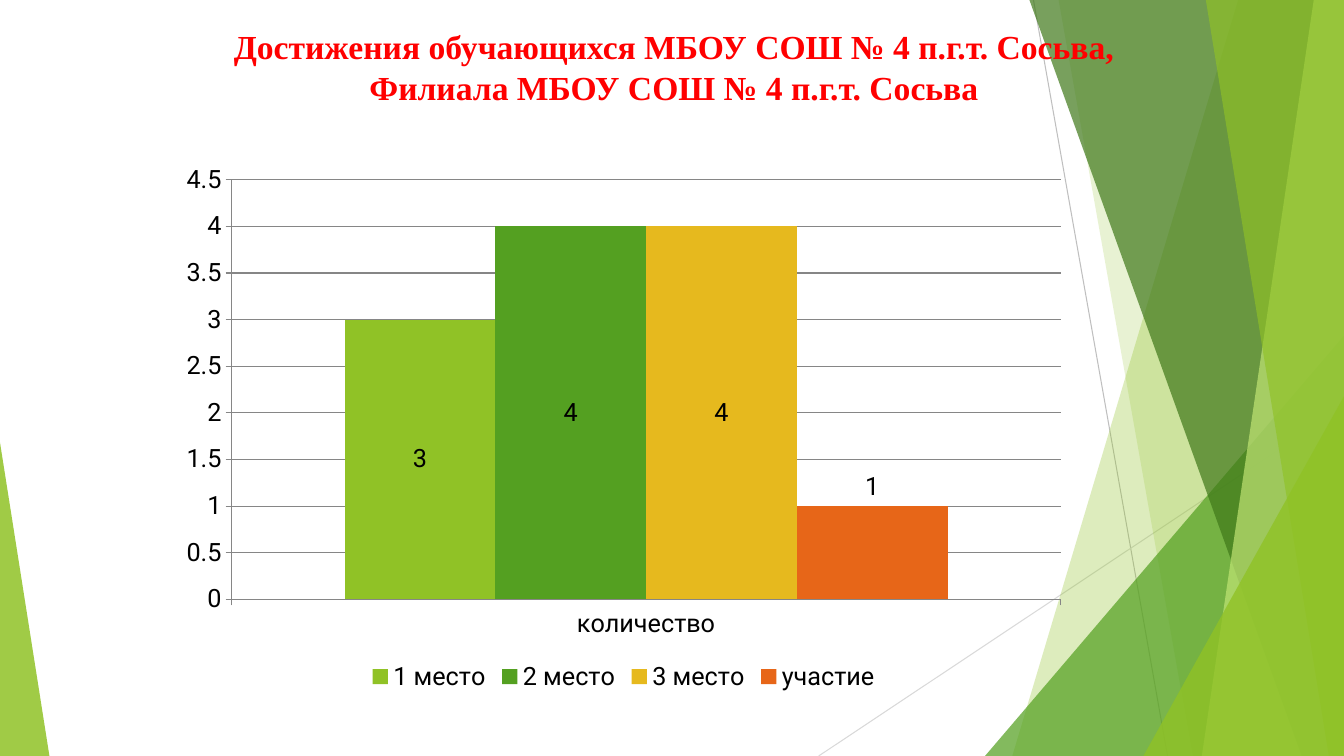
from dataclasses import dataclass

from lxml import etree
from pptx import Presentation
from pptx.chart.data import CategoryChartData
from pptx.dml.color import RGBColor
from pptx.enum.chart import XL_CHART_TYPE, XL_LABEL_POSITION, XL_LEGEND_POSITION, XL_TICK_MARK
from pptx.enum.shapes import MSO_CONNECTOR, MSO_SHAPE
from pptx.enum.text import MSO_AUTO_SIZE, PP_ALIGN
from pptx.oxml.ns import qn
from pptx.util import Pt

COLUMNS = XL_CHART_TYPE.COLUMN_CLUSTERED
LABEL_CENTER = XL_LABEL_POSITION.CENTER
LABEL_ABOVE = XL_LABEL_POSITION.OUTSIDE_END
LEGEND_BOTTOM = XL_LEGEND_POSITION.BOTTOM
TICK_OUTSIDE = XL_TICK_MARK.OUTSIDE
STRAIGHT = MSO_CONNECTOR.STRAIGHT
TRIANGLE = MSO_SHAPE.ISOSCELES_TRIANGLE
FIT_SHAPE = MSO_AUTO_SIZE.SHAPE_TO_FIT_TEXT
CENTER = PP_ALIGN.CENTER


@dataclass
class Theme:
    lime: str = "90C226"
    green: str = "54A021"
    forest: str = "3F7819"
    pale: str = "C0E474"
    yellow: str = "E6B91E"
    orange: str = "E76618"
    title: str = "FF0000"
    text: str = "000000"
    axis: str = "868686"
    line_dark: str = "BFBFBF"
    line_light: str = "D9D9D9"
    title_font: str = "Times New Roman"
    chart_font: str = "Roboto"
    title_size: int = 24
    chart_size: int = 18
    line_width: float = 0.75


theme = Theme()
PX = 9144
WIDTH, HEIGHT = 1333, 750


def paint(shape, color, opacity):
    shape.shadow.inherit = False
    shape.fill.solid()
    shape.fill.fore_color.rgb = RGBColor.from_string(color)
    shape.line.fill.background()
    swatch = shape.fill._xPr.find(qn("a:solidFill"))[0]
    etree.SubElement(swatch, qn("a:alpha")).set("val", str(opacity * 1000))


def add_text(page, lines, left, top, width, height, size, font, color, bold=False, align=CENTER):
    box = page.shapes.add_textbox(left * PX, top * PX, width * PX, height * PX)
    frame = box.text_frame
    frame.word_wrap = True
    frame.auto_size = FIT_SHAPE
    for index, line in enumerate(lines):
        para = frame.add_paragraph() if index else frame.paragraphs[0]
        para.alignment = align
        span = para.add_run()
        span.text = line
        span.font.size = Pt(size)
        span.font.name = font
        span.font.bold = bold
        span.font.color.rgb = RGBColor.from_string(color)


deck = Presentation()
deck.slide_width = WIDTH * PX
deck.slide_height = HEIGHT * PX
page = deck.slides.add_slide(deck.slide_layouts[6])

rays = [
    (1025, 0, 1158, HEIGHT, theme.line_dark),
    (WIDTH, 403, 812, HEIGHT, theme.line_light),
]
for start_x, start_y, end_x, end_y, color in rays:
    ray = page.shapes.add_connector(STRAIGHT, start_x * PX, start_y * PX, end_x * PX, end_y * PX)
    ray.line.color.rgb = RGBColor.from_string(color)
    ray.line.width = Pt(theme.line_width)
    etree.SubElement(ray._element.spPr, qn("a:effectLst"))

facets = [
    ("band", (1228, 1004), theme.lime, 30),
    ("band", (1050, 1183), theme.lime, 20),
    ("triangle", (977, 333, 356, 1), theme.green, 72),
    ("band", (1021, 1291), theme.forest, 70),
    ("band", (1303, 1192), theme.pale, 70),
    ("band", (1196, 1318), theme.lime, 65),
    ("triangle", (1134, 393, 199, 1), theme.lime, 80),
    ("triangle", (0, 439, 49, 0), theme.lime, 85),
]
for kind, place, color, opacity in facets:
    if kind == "band":
        top_x, bottom_x = place
        outline = page.shapes.build_freeform(top_x, 0, scale=PX)
        outline.add_line_segments([(WIDTH, 0), (WIDTH, HEIGHT), (bottom_x, HEIGHT)], close=True)
        facet = outline.convert_to_shape()
    else:
        left, top, width, apex = place
        facet = page.shapes.add_shape(TRIANGLE, left * PX, top * PX, width * PX, (HEIGHT - top) * PX)
        facet.adjustments[0] = apex
    paint(facet, color, opacity)

title_lines = [
    "Достижения обучающихся МБОУ СОШ № 4 п.г.т. Сосьва, ",
    "Филиала МБОУ СОШ № 4 п.г.т. Сосьва ",
]
add_text(page, title_lines, 130, 21, 1085, 91, size=theme.title_size,
         font=theme.title_font, color=theme.title, bold=True)

results = [
    ("1 место", 3, theme.lime, LABEL_CENTER),
    ("2 место", 4, theme.green, LABEL_CENTER),
    ("3 место", 4, theme.yellow, LABEL_CENTER),
    ("участие", 1, theme.orange, LABEL_ABOVE),
]
data = CategoryChartData()
data.categories = ["количество"]
for name, count, color, position in results:
    data.add_series(name, [count])
chart = page.shapes.add_chart(COLUMNS, 167 * PX, 153 * PX, 903 * PX, 538 * PX, data).chart
chart.has_title = False
chart.font.name = theme.chart_font
chart.font.size = Pt(theme.chart_size)
chart.font.color.rgb = RGBColor.from_string(theme.text)
chart.has_legend = True
chart.legend.position = LEGEND_BOTTOM
chart.legend.include_in_layout = False

plot = chart.plots[0]
plot.gap_width = 150
plot.overlap = 0
plot.vary_by_categories = False
for series, (name, count, color, position) in zip(plot.series, results):
    series.format.fill.solid()
    series.format.fill.fore_color.rgb = RGBColor.from_string(color)
    series.data_labels.show_value = True
    series.data_labels.position = position

scale = chart.value_axis
scale.minimum_scale = 0
scale.maximum_scale = 4.5
scale.major_unit = 0.5
scale.has_major_gridlines = True
scale.tick_labels.number_format = "General"
scale.tick_labels.number_format_is_linked = False
for axis in (chart.category_axis, scale):
    axis.major_tick_mark = TICK_OUTSIDE
for ruled in (chart.category_axis, scale, scale.major_gridlines):
    ruled.format.line.color.rgb = RGBColor.from_string(theme.axis)
    ruled.format.line.width = Pt(theme.line_width)

deck.save("out.pptx")
